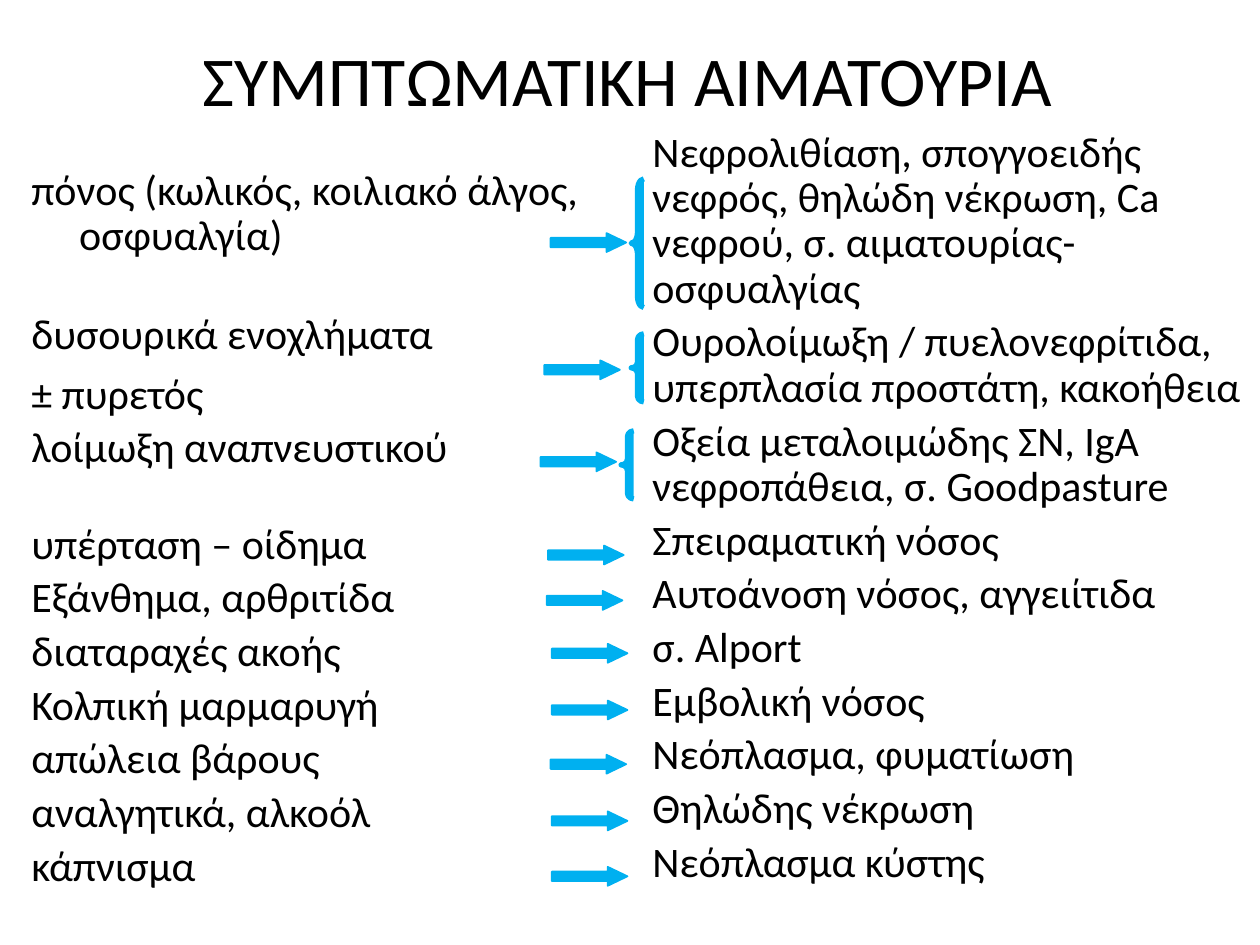
from pptx import Presentation
from pptx.dml.color import RGBColor
from pptx.enum.shapes import MSO_SHAPE
from pptx.enum.text import MSO_ANCHOR, PP_ALIGN
from pptx.util import Inches, Pt

BLACK = RGBColor(0x00, 0x00, 0x00)
SKY = RGBColor(0x00, 0xB0, 0xF0)
ARROW, BRACE = MSO_SHAPE.RIGHT_ARROW, MSO_SHAPE.LEFT_BRACE
TOP, MIDDLE = MSO_ANCHOR.TOP, MSO_ANCHOR.MIDDLE
LEFT, CENTER = PP_ALIGN.LEFT, PP_ALIGN.CENTER

TITLE = "ΣΥΜΠΤΩΜΑΤΙΚΗ ΑΙΜΑΤΟΥΡΙΑ"
# Each symptom: text, then the paragraph format that differs from the usual one
SYMPTOMS = [
    ("πόνος (κωλικός, κοιλιακό άλγος, οσφυαλγία)", {}),
    ("δυσουρικά ενοχλήματα", {"space_before": Pt(30.8)}),
    ("± πυρετός", {"line_spacing": 1.0}),
    ("λοίμωξη αναπνευστικού", {}),
    ("υπέρταση – οίδημα", {"space_before": Pt(23.6), "line_spacing": 1.1}),
    ("Εξάνθημα, αρθριτίδα", {}),
    ("διαταραχές ακοής", {}),
    ("Κολπική μαρμαρυγή", {}),
    ("απώλεια βάρους", {}),
    ("αναλγητικά, αλκοόλ", {}),
    ("κάπνισμα", {}),
]
CAUSES = [(text, {}) for text in (
    "Νεφρολιθίαση, σπογγοειδής νεφρός, θηλώδη νέκρωση, Ca νεφρού, "
    "σ. αιματουρίας-οσφυαλγίας",
    "Ουρολοίμωξη / πυελονεφρίτιδα, υπερπλασία προστάτη, κακοήθεια",
    "Οξεία μεταλοιμώδης ΣΝ, IgA νεφροπάθεια, σ. Goodpasture",
    "Σπειραματική νόσος",
    "Αυτοάνοση νόσος, αγγειίτιδα",
    "σ. Αlport",
    "Εμβολική νόσος",
    "Νεόπλασμα, φυματίωση",
    "Θηλώδης νέκρωση",
    "Νεόπλασμα κύστης",
)]
# Left, top, height and curl of each brace
BRACES = [(5.01, 1.42, 1.02, 0.88), (5.01, 2.65, 0.54, 0.46), (4.93, 3.42, 0.54, 0.46)]
# Left and top of each arrow, one per cause
ARROWS = [(4.37, 1.85), (4.32, 2.86), (4.29, 3.59), (4.35, 4.33), (4.34, 4.69),
          (4.38, 5.11), (4.38, 5.56), (4.37, 5.99), (4.38, 6.44), (4.38, 6.88)]


class SlideBuilder:
    font = "Calibri"
    text_color = BLACK
    accent = SKY
    list_format = {"alignment": LEFT, "line_spacing": 0.9, "space_before": Pt(4.8)}

    def __init__(self, page):
        self.page = page

    def text(self, bounds, paragraphs, size, base_format, anchor=TOP, hanging=0):
        box = self.page.shapes.add_textbox(*map(Inches, bounds))
        frame = box.text_frame
        frame.word_wrap = True
        frame.vertical_anchor = anchor
        for index, (words, changes) in enumerate(paragraphs):
            para = frame.add_paragraph() if index else frame.paragraphs[0]
            for name, value in {**base_format, **changes}.items():
                setattr(para, name, value)
            if hanging:
                properties = para._p.get_or_add_pPr()
                properties.set("marL", str(Inches(hanging)))
                properties.set("indent", str(-Inches(hanging)))
            span = para.add_run()
            span.text = words
            for name, value in {"name": self.font, "size": Pt(size)}.items():
                setattr(span.font, name, value)
            span.font.color.rgb = self.text_color

    def shape(self, kind, bounds, adjustments, line_width):
        shape = self.page.shapes.add_shape(kind, *map(Inches, bounds))
        shape.shadow.inherit = False
        for index, value in enumerate(adjustments):
            shape.adjustments[index] = value
        shape.fill.solid()
        shape.fill.fore_color.rgb = self.accent
        shape.line.color.rgb = self.accent
        shape.line.width = Pt(line_width)

    def brace(self, left, top, height, curl):
        self.shape(BRACE, (left, top, 0.1, height), (curl, 0.5), 3)

    def arrow(self, left, top):
        self.shape(ARROW, (left, top, 0.6, 0.15), (0.5, 1.04), 1)


def main():
    deck = Presentation()
    deck.slide_width, deck.slide_height = Inches(10), Inches(7.5)
    builder = SlideBuilder(deck.slides.add_slide(deck.slide_layouts[6]))

    builder.text((0.48, 0, 9, 1.25), [(TITLE, {})], 40, {"alignment": CENTER}, MIDDLE)
    builder.text((0.15, 1.29, 4.85, 6.21), SYMPTOMS, 24, builder.list_format, hanging=0.38)
    builder.text((5.08, 0.99, 4.92, 6.3), CAUSES, 24, builder.list_format)
    for brace in BRACES:
        builder.brace(*brace)
    for arrow in ARROWS:
        builder.arrow(*arrow)

    deck.save("out.pptx")


if __name__ == "__main__":
    main()
